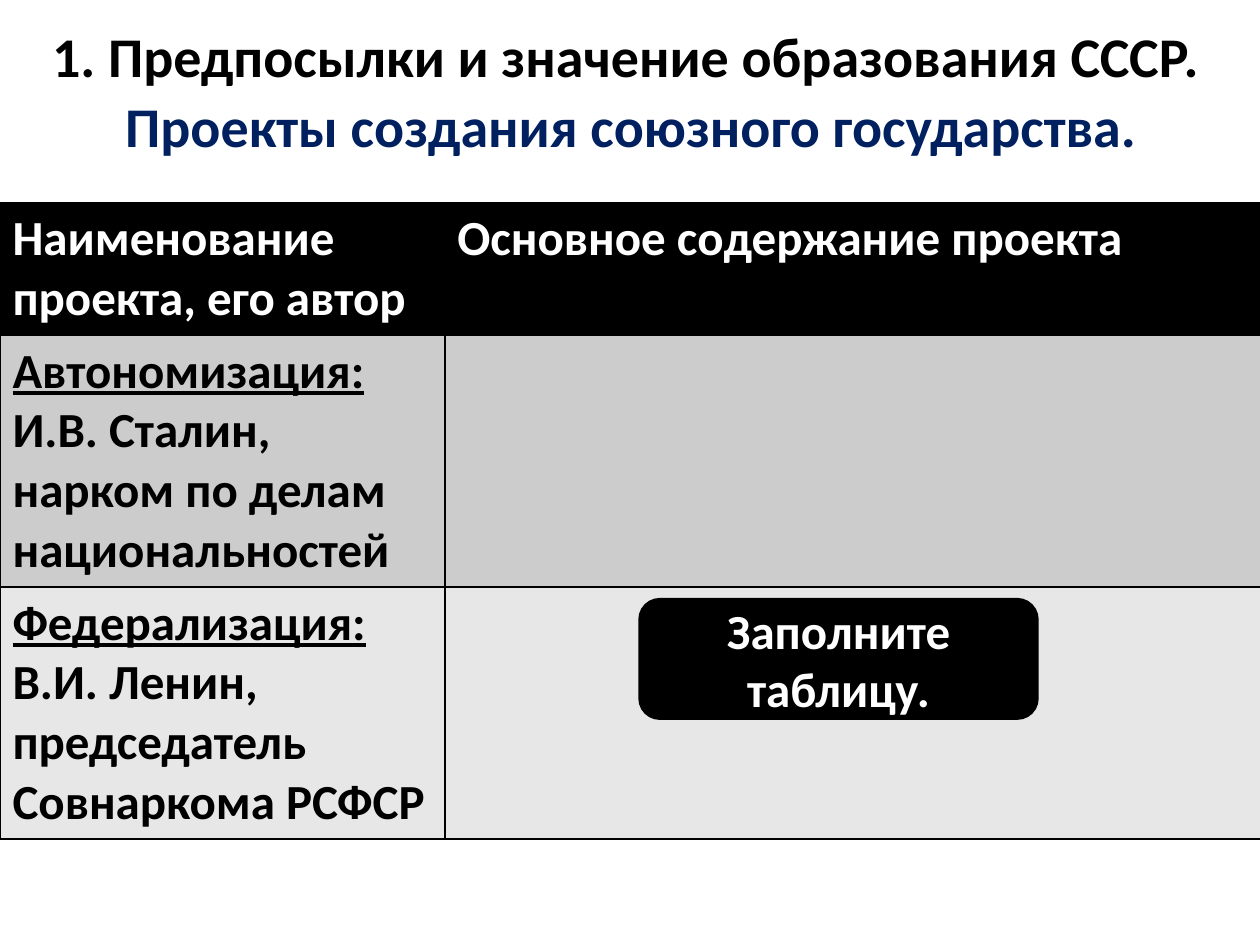
from dataclasses import dataclass

from lxml import etree
from pptx import Presentation
from pptx import util as u
from pptx.dml.color import RGBColor
from pptx.enum import shapes, text
from pptx.oxml import ns


@dataclass
class Theme:
    font: str = "Calibri"
    black: str = "000000"
    white: str = "FFFFFF"
    navy: str = "002060"
    dark: str = "CCCCCC"
    light: str = "E7E7E7"
    head: int = 32
    body: int = 28


class Deck:
    """Holds the theme and the current slide, and draws each kind of element."""

    def __init__(self, theme):
        self.theme = theme
        self.prs = Presentation()
        self.prs.slide_width, self.prs.slide_height = u.Inches(10), u.Inches(7.5)
        self.slide = self.prs.slides.add_slide(self.prs.slide_layouts[6])

    def fill_text(self, frame, runs, size, tint, align=text.PP_ALIGN.LEFT):
        frame.word_wrap = True
        para = frame.paragraphs[0]
        para.alignment = align
        for words, line in runs:
            run = para.add_run()
            run.text = words
            font = run.font
            font.name, font.size, font.bold = self.theme.font, u.Pt(size), True
            font.underline = line
            font.color.rgb = RGBColor.from_string(tint)

    def label(self, box, words, tint, anchor):
        frame = self.slide.shapes.add_textbox(*map(u.Inches, box)).text_frame
        frame.vertical_anchor = anchor
        self.fill_text(frame, [(words, False)], self.theme.head, tint,
                       text.PP_ALIGN.CENTER)

    def paint(self, item, tint):
        item.fill.solid()
        item.fill.fore_color.rgb = RGBColor.from_string(tint)

    def edge(self, cell):
        props = cell._tc.get_or_add_tcPr()
        for spot, side in enumerate(("lnL", "lnR", "lnT", "lnB")):
            line = etree.Element(ns.qn(f"a:{side}"), w=str(u.Pt(1)))
            fill = etree.SubElement(line, ns.qn("a:solidFill"))
            etree.SubElement(fill, ns.qn("a:srgbClr"), val=self.theme.black)
            props.insert(spot, line)

    def table(self, box, cols, rows):
        grid = self.slide.shapes.add_table(len(rows), len(cols), *map(u.Inches, box)).table
        for col, width in zip(grid.columns, cols):
            col.width = u.Inches(width)
        for i, (height, fill, tint, cells) in enumerate(rows):
            grid.rows[i].height = u.Inches(height)
            for j, runs in enumerate(cells):
                cell = grid.cell(i, j)
                self.paint(cell, fill)
                self.edge(cell)
                self.fill_text(cell.text_frame, runs, self.theme.body, tint)

    def badge(self, box, words):
        kind = shapes.MSO_SHAPE.ROUNDED_RECTANGLE
        shape = self.slide.shapes.add_shape(kind, *map(u.Inches, box))
        shape.shadow.inherit = False
        self.paint(shape, self.theme.black)
        shape.line.color.rgb = RGBColor.from_string(self.theme.black)
        shape.line.width = u.Pt(2)
        shape.text_frame.vertical_anchor = text.MSO_ANCHOR.MIDDLE
        self.fill_text(shape.text_frame, [(words, False)], self.theme.body,
                       self.theme.white, text.PP_ALIGN.CENTER)


def main():
    theme = Theme()
    deck = Deck(theme)
    deck.label((0.22, -0.34, 9.5, 1.55), "1. Предпосылки и значение образования СССР.",
               theme.black, text.MSO_ANCHOR.MIDDLE)
    deck.label((0.51, 0.68, 9, 4.95), "Проекты создания союзного государства.",
               theme.navy, text.MSO_ANCHOR.TOP)
    deck.table((0, 1.61, 10.03, 5.05), (3.53, 6.5), [
        (1.05, theme.black, theme.white,
         [[("Наименование проекта, его автор", False)],
          [("Основное содержание проекта", False)]]),
        (2, theme.dark, theme.black,
         [[("Автономизация: ", True),
           ("И.В. Сталин, нарком по делам национальностей", False)], []]),
        (2, theme.light, theme.black,
         [[("Федерализация: ", True),
           ("В.И. Ленин, председатель Совнаркома РСФСР", False)], []]),
    ])
    deck.badge((5.08, 4.76, 3.15, 0.94), "Заполните таблицу.")
    deck.prs.save("out.pptx")


if __name__ == "__main__":
    main()
